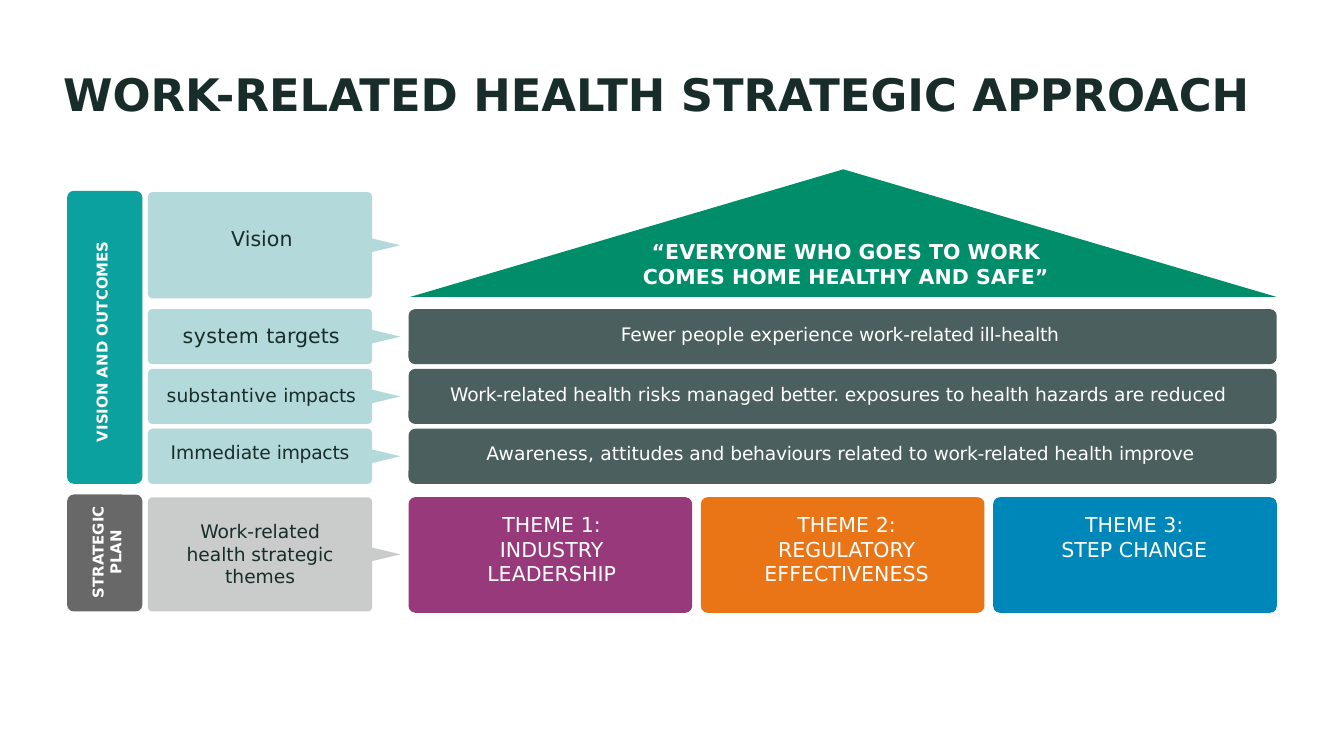
import pptx
import pptx.util
import pptx.dml.color
import pptx.enum.shapes
import pptx.enum.text

Inches = pptx.util.Inches
RGBColor = pptx.dml.color.RGBColor
Shape = pptx.enum.shapes.MSO_SHAPE
Align = pptx.enum.text.PP_ALIGN

FONT = "DejaVu Sans"
INK = RGBColor(0x18, 0x2D, 0x2A)
WHITE = RGBColor(0xFF, 0xFF, 0xFF)
TEAL = RGBColor(0x0B, 0xA1, 0x9E)
GREY = RGBColor(0x68, 0x68, 0x69)
SLATE = RGBColor(0x4B, 0x5F, 0x5E)
GREEN = RGBColor(0x00, 0x8D, 0x6A)
PALE_TEAL = RGBColor(0xB4, 0xD9, 0xDB)
PALE_GREY = RGBColor(0xCA, 0xCB, 0xCB)
PURPLE = RGBColor(0x98, 0x39, 0x7B)
ORANGE = RGBColor(0xEA, 0x75, 0x17)
BLUE = RGBColor(0x00, 0x87, 0xB9)

TITLE = "WORK-RELATED HEALTH STRATEGIC APPROACH"
VISION = "“EVERYONE WHO GOES TO WORK COMES HOME HEALTHY AND SAFE”"

# text, colour, top, height, text area, alignment
STAGES = [
    ("VISION AND OUTCOMES", TEAL, 1.42, 2.18, (0.69, 1.75, 0.13, 1.54), Align.LEFT),
    ("STRATEGIC PLAN", GREY, 3.68, 0.87, (0.66, 3.74, 0.27, 0.74), Align.CENTER),
]
# label spans, size, area, statement spans, area; a span is text and letter spacing in points
ROWS = [
    ([("system ", 0.2), ("targets", 0)], 11, (1.36, 2.4, 1.2, 0.19),
     [("Fewer ", -0.1), ("people experience ", 0), ("work-related ill-health", -0.1)],
     (4.62, 2.4, 3.35, 0.17)),
    ([("substantive ", 0.1), ("impacts", -0.1)], 10, (1.24, 2.86, 1.44, 0.17),
     [("Work-related ", -0.1), ("health risks managed ", 0), ("better. ", -0.2),
      ("exposures to health hazards are reduced", 0)],
     (3.35, 2.85, 5.89, 0.17)),
    ([("Immediate ", 0), ("impacts", -0.1)], 10, (1.27, 3.28, 1.38, 0.17),
     [("Awareness, ", 0.1), ("attitudes and ", 0), ("behaviours ", -0.1), ("related to ", 0),
      ("work-related ", -0.1), ("health ", 0), ("improve", -0.1)],
     (3.62, 3.29, 5.36, 0.17)),
]
# text, colour, text left, text width, text height
THEMES = [
    ("THEME 1: INDUSTRY LEADERSHIP", PURPLE, 3.6, 1.01, 0.56),
    ("THEME 2: REGULATORY EFFECTIVENESS", ORANGE, 5.66, 1.28, 0.56),
    ("THEME 3: STEP CHANGE", BLUE, 7.88, 1.12, 0.37),
]

STAGE_LEFT, STAGE_WIDTH = 0.5, 0.56
TAG_LEFT, TAG_RIGHT, TAG_TIP = 1.1, 2.77, 2.98
MAIN_LEFT, MAIN_WIDTH = 3.04, 6.46
ROW_TOP, ROW_HEIGHT, ROW_STEP = 2.3, 0.41, 0.445
THEME_TOP, THEME_WIDTH, THEME_HEIGHT = 3.7, 2.11, 0.86
CORNER = 0.05

deck = pptx.Presentation()
deck.slide_width = Inches(10)
deck.slide_height = deck.slide_width * 9 // 16
page = deck.slides.add_slide(deck.slide_layouts[6])


def paint(shape, colour):
    shape.shadow.inherit = False
    shape.fill.solid()
    shape.fill.fore_color.rgb = colour
    shape.line.fill.background()


def add_block(kind, left, top, width, height, colour):
    block = page.shapes.add_shape(kind, *map(Inches, (left, top, width, height)))
    if kind == Shape.ROUNDED_RECTANGLE:
        block.adjustments[0] = CORNER / min(width, height)
    paint(block, colour)


def add_tag(top, height, colour):
    """Draw a rounded label box with a pointer on its right side."""
    left, right, bottom, middle = TAG_LEFT, TAG_RIGHT, top + height, top + height / 2
    far, mid, near = 0.08, 0.03, 0.01
    points = [(right - far, top), (left + far, top)]
    points += [(left + mid, top), (left + near, top + near), (left, top + mid), (left, top + far)]
    points += [(left, bottom - far), (left, bottom - mid), (left + near, bottom - near),
               (left + mid, bottom), (left + far, bottom)]
    points += [(right - far, bottom), (right - mid, bottom), (right - near, bottom - near),
               (right, bottom - mid)]
    points += [(right, middle + 0.05), (TAG_TIP, middle), (right, middle - 0.05)]
    points += [(right, top + mid), (right - near, top + near), (right - mid, top)]
    points = [(Inches(x), Inches(y)) for x, y in points]
    builder = page.shapes.build_freeform(*points[0])
    builder.add_line_segments(points[1:], close=True)
    paint(builder.convert_to_shape(), colour)


def add_text(spans, area, size, colour=WHITE, bold=False, align=Align.LEFT,
             wrap=False, upward=False):
    """Add a text box; spans is a string or a list of (text, letter spacing)."""
    box = page.shapes.add_textbox(*map(Inches, area))
    frame = box.text_frame
    frame.margin_left = frame.margin_right = frame.margin_top = frame.margin_bottom = 0
    frame.word_wrap = wrap
    if upward:
        frame._txBody.bodyPr.set("vert", "vert270")
    paragraph = frame.paragraphs[0]
    paragraph.alignment = align
    for text, spacing in [(spans, 0)] if isinstance(spans, str) else spans:
        span = paragraph.add_run()
        span.text = text
        span.font.name, span.font.size, span.font.bold = FONT, pptx.util.Pt(size), bold
        span.font.color.rgb = colour
        if spacing:
            span.font._element.set("spc", str(round(spacing * 100)))


add_text(TITLE, (0.47, 0.5, 9.36, 0.4), 24, INK, bold=True)

for text, colour, top, height, area, align in STAGES:
    add_block(Shape.ROUNDED_RECTANGLE, STAGE_LEFT, top, STAGE_WIDTH, height, colour)
    add_text(text, area, 8, bold=True, align=align, wrap=True, upward=True)

add_tag(1.43, 0.79, PALE_TEAL)
add_text("Vision", (1.72, 1.68, 0.49, 0.19), 11, INK)
add_block(Shape.ISOSCELES_TRIANGLE, 3.05, 1.26, 6.45, 0.95, GREEN)
add_text(VISION, (4.78, 1.78, 3.03, 0.37), 11, bold=True, align=Align.CENTER, wrap=True)

for index, (label, size, label_area, statement, statement_area) in enumerate(ROWS):
    top = ROW_TOP + index * ROW_STEP
    add_tag(top, ROW_HEIGHT, PALE_TEAL)
    add_text(label, label_area, size, INK)
    add_block(Shape.ROUNDED_RECTANGLE, MAIN_LEFT, top, MAIN_WIDTH, ROW_HEIGHT, SLATE)
    add_text(statement, statement_area, 10)

add_tag(THEME_TOP, 0.85, PALE_GREY)
add_text("Work-related health strategic themes", (1.38, 3.87, 1.11, 0.51), 10, INK,
         align=Align.CENTER, wrap=True)

theme_step = (MAIN_WIDTH - THEME_WIDTH) / (len(THEMES) - 1)
for index, (text, colour, left, width, height) in enumerate(THEMES):
    add_block(Shape.ROUNDED_RECTANGLE, MAIN_LEFT + index * theme_step, THEME_TOP,
              THEME_WIDTH, THEME_HEIGHT, colour)
    add_text(text, (left, 3.81, width, height), 11, align=Align.CENTER, wrap=True)

deck.save("out.pptx")
